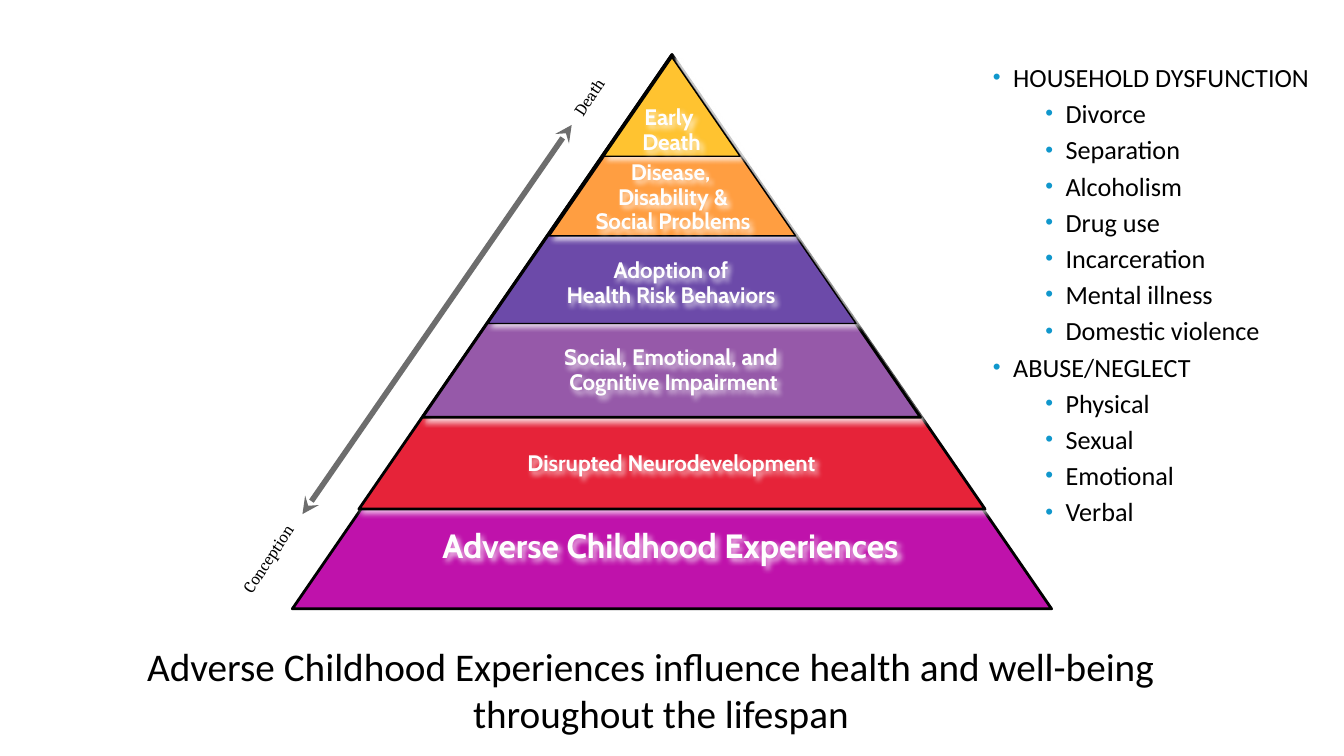
from pptx import Presentation
from pptx.dml.color import RGBColor
from pptx.enum import shapes, text
from pptx.oxml import parse_xml
from pptx.oxml.ns import nsdecls, qn
from pptx.util import Inches, Pt

COLORS = {
    "black": "000000", "white": "FFFFFF", "label": "FEFEFE", "arrow": "6D6D6D",
    "bullet": "1097CC", "magenta": "BF12AB", "red": "E62339", "violet": "9659A9",
    "purple": "6C4AA9", "orange": "FF9E41", "yellow": "FFC330",
}
CENTER = text.PP_ALIGN.CENTER

# Triangle box, colour, line width, label box, label lines, label size
TIERS = [
    ((2.9, 0.57, 7.53, 5.47), "magenta", 2, (4.07, 5.38, 5.16, 0.2),
     ["Adverse Childhood Experiences"], 24),
    ((3.56, 0.54, 6.21, 4.51), "red", 2, (5.09, 4.57, 3.14, 0.14),
     ["Disrupted Neurodevelopment"], 16),
    ((4.19, 0.55, 4.94, 3.59), "violet", 2, (5.45, 3.52, 2.46, 0.38),
     ["Social, Emotional, and ", "Cognitive Impairment"], 16),
    ((4.84, 0.56, 3.65, 2.65), "purple", 1, (5.47, 2.66, 2.37, 0.38),
     ["Adoption of", "Health Risk Behaviors"], 16),
    ((5.45, 0.57, 2.44, 1.77), "orange", 1, (5.8, 1.68, 1.75, 0.63),
     ["Disease, ", "Disability &", "Social Problems"], 16),
    ((5.99, 0.57, 1.35, 0.98), "yellow", 1, (6.35, 1.14, 0.62, 0.38),
     ["Early ", "Death"], 16),
]
EXPERIENCES = {
    "HOUSEHOLD DYSFUNCTION": ["Divorce", "Separation", "Alcoholism", "Drug use",
                              "Incarceration", "Mental illness", "Domestic violence"],
    "ABUSE/NEGLECT": ["Physical", "Sexual", "Emotional", "Verbal"],
}


def rgb(name):
    return RGBColor.from_string(COLORS[name])


def write(paragraph, content, font="Calibri", size=18, color="black", bold=False,
          align=None, line_spacing=None, before=0):
    """Put formatted text in a paragraph."""
    run = paragraph.add_run()
    run.text = content
    run.font.name, run.font.size, run.font.bold = font, Pt(size), bold
    run.font.color.rgb = rgb(color)
    paragraph.alignment = align
    paragraph.line_spacing = line_spacing
    paragraph.space_before = Pt(before)


class PyramidSlide:
    def __init__(self, presentation):
        self.slide = presentation.slides.add_slide(presentation.slide_layouts[5])

    def place(self, shape, box):
        shape.left, shape.top, shape.width, shape.height = map(Inches, box)

    def glow(self, shape):
        """Soft white shadow to the lower right."""
        shape.shadow.inherit = False
        effects = shape._element.spPr.find(qn("a:effectLst"))
        effects.append(parse_xml(
            f'<a:outerShdw {nsdecls("a")} blurRad="{Pt(4)}" dist="{Pt(3)}" dir="2700000">'
            f'<a:srgbClr val="{COLORS["white"]}"><a:alpha val="75000"/></a:srgbClr>'
            '</a:outerShdw>'))

    def triangle(self, box, color, line_width):
        shape = self.slide.shapes.add_shape(
            shapes.MSO_SHAPE.ISOSCELES_TRIANGLE, *map(Inches, box))
        shape.fill.solid()
        shape.fill.fore_color.rgb = rgb(color)
        shape.line.color.rgb = rgb("black")
        shape.line.width = Pt(line_width)
        self.glow(shape)

    def label(self, box, lines, rotation=0, **style):
        shape = self.slide.shapes.add_textbox(*map(Inches, box))
        shape.rotation = rotation
        frame = shape.text_frame
        frame.margin_left = frame.margin_right = frame.margin_top = frame.margin_bottom = 0
        frame.word_wrap = False
        frame.auto_size = text.MSO_AUTO_SIZE.SHAPE_TO_FIT_TEXT
        frame.vertical_anchor = text.MSO_ANCHOR.MIDDLE
        for index, line in enumerate(lines):
            paragraph = frame.add_paragraph() if index else frame.paragraphs[0]
            write(paragraph, line, align=CENTER, **style)
        return shape

    def arrow(self, start, end):
        connector = self.slide.shapes.add_connector(
            shapes.MSO_CONNECTOR.STRAIGHT, *map(Inches, start + end))
        connector.line.color.rgb = rgb("arrow")
        connector.line.width = Pt(4)
        outline = connector.line._get_or_add_ln()
        for tag in ("headEnd", "tailEnd"):
            outline.append(parse_xml(f'<a:{tag} {nsdecls("a")} type="stealth"/>'))
        connector._element.spPr.append(parse_xml(f'<a:effectLst {nsdecls("a")}/>'))

    def bullets(self, box, groups):
        frame = self.slide.shapes.add_textbox(*map(Inches, box)).text_frame
        frame.word_wrap = True
        frame.margin_right = Inches(0.19)
        items = [(level, item) for heading, children in groups.items()
                 for level, item in [(0, heading)] + [(1, child) for child in children]]
        for index, (level, item) in enumerate(items):
            paragraph = frame.add_paragraph() if index else frame.paragraphs[0]
            write(paragraph, item, size=18.7, before=3.4)
            paragraph.level = level
            properties = paragraph._p.get_or_add_pPr()
            properties.set("marL", str(Inches((0.2, 0.72)[level])))
            properties.set("indent", str(Inches(-0.2)))
            for bullet in (f'buClr {nsdecls("a")}><a:srgbClr val="{COLORS["bullet"]}"/></a:buClr',
                           f'buSzPct {nsdecls("a")} val="85000"/',
                           f'buFont {nsdecls("a")} typeface="Arial"/',
                           f'buChar {nsdecls("a")} char="•"/'):
                properties.append(parse_xml(f"<a:{bullet}>"))

    def title(self, box, lines):
        shape = self.slide.shapes.title
        self.place(shape, box)
        frame = shape.text_frame
        frame.word_wrap = False
        frame.auto_size = text.MSO_AUTO_SIZE.SHAPE_TO_FIT_TEXT
        frame.vertical_anchor = text.MSO_ANCHOR.TOP
        for index, (line, align) in enumerate(lines):
            paragraph = frame.add_paragraph() if index else frame.paragraphs[0]
            write(paragraph, line, size=28, align=align)


def main():
    presentation = Presentation()
    presentation.slide_width, presentation.slide_height = Inches(13.33), Inches(7.5)
    page = PyramidSlide(presentation)

    # Pyramid, widest tier at the back
    for box, color, line_width, label_box, lines, size in TIERS:
        page.triangle(box, color, line_width)
        label = page.label(label_box, lines, font="Cabin", size=size, color="label",
                           bold=True, line_spacing=0.5, before=8)
        page.glow(label)

    # Lifespan arrow
    page.arrow((5.67, 1.24), (3, 5.1))
    for box, stage in (((2.22, 5.44, 0.87, 0.2), "Conception"),
                       ((5.61, 0.86, 0.46, 0.2), "Death")):
        page.label(box, [stage], rotation=303.5, font="Cambria", size=12, before=17)

    # List of experiences and closing title
    page.bullets((9.75, 0.56, 3.48, 5.67), EXPERIENCES)
    page.title((1.36, 6.32, 10.39, 1.04), [
        ("Adverse Childhood Experiences influence health and well-being", text.PP_ALIGN.LEFT),
        ("throughout the lifespan", CENTER),
    ])
    presentation.save("out.pptx")


if __name__ == "__main__":
    main()
